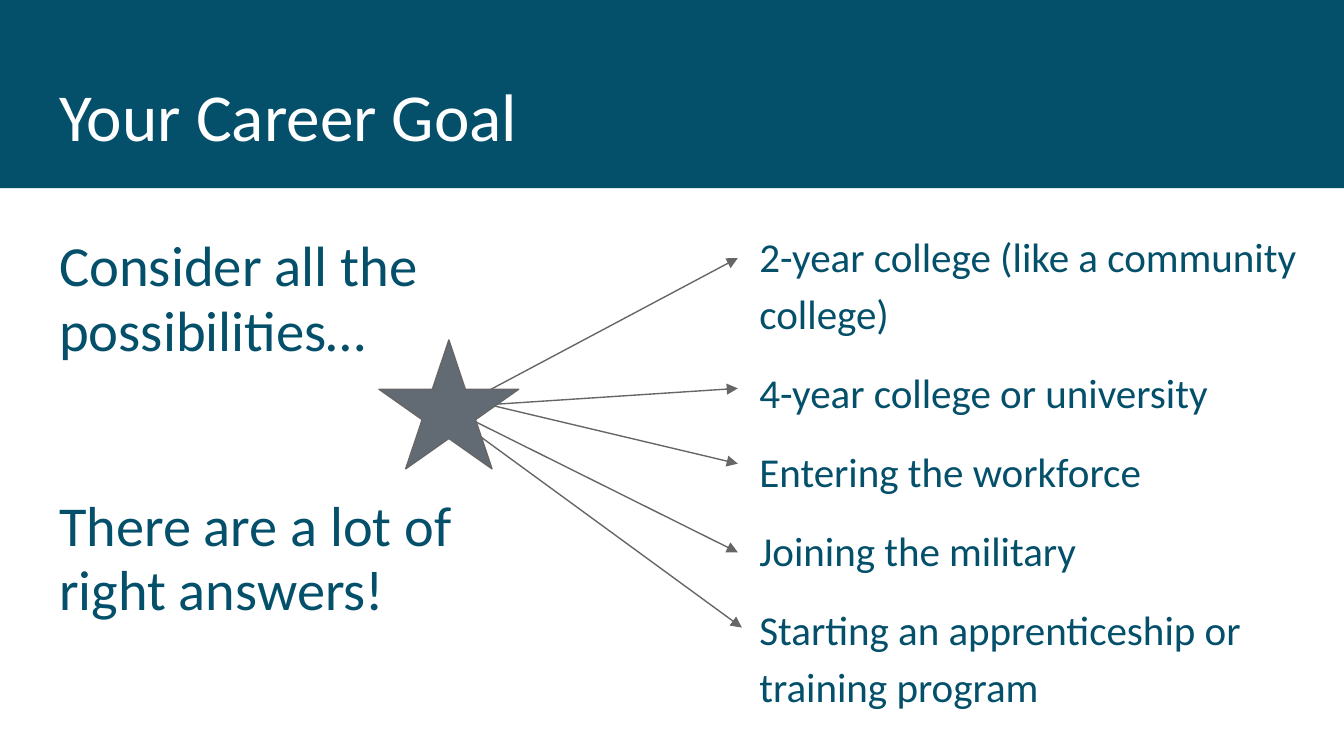
import pptx
import pptx.dml.color
import pptx.enum.shapes
import pptx.enum.text
import pptx.oxml
import pptx.oxml.ns
import pptx.util
from pptx.util import Inches

FONT = "Calibri"
TEAL, WHITE, SLATE, GRAY = "04506B", "FFFFFF", "626B73", "666666"

OPTIONS = [
    "2-year college (like a community college)",
    "4-year college or university",
    "Entering the workforce",
    "Joining the military",
    "Starting an apprenticeship or training program",
]

# Start and end of each arrow, from the top option to the bottom one
ARROWS = [
    ((3.29, 3.09), (5.49, 1.92)),
    ((3.2, 3.04), (5.49, 2.89)),
    ((3.38, 2.95), (5.49, 3.45)),
    ((3.16, 2.95), (5.49, 4.11)),
    ((3.22, 2.99), (5.52, 4.67)),
]


def color(hex_value):
    return pptx.dml.color.RGBColor.from_string(hex_value)


def add_element(parent, tag, **attributes):
    child = parent.makeelement(pptx.oxml.ns.qn(tag), attributes)
    parent.append(child)
    return child


def place(shape, left, top, width, height):
    """Move a placeholder and give it plain, top-anchored text settings."""
    shape.left, shape.top = Inches(left), Inches(top)
    shape.width, shape.height = Inches(width), Inches(height)
    frame = shape.text_frame
    frame.word_wrap = True
    frame.auto_size = pptx.enum.text.MSO_AUTO_SIZE.NONE
    frame.vertical_anchor = pptx.enum.text.MSO_ANCHOR.TOP
    frame.margin_left = frame.margin_right = Inches(0.1)
    frame.margin_top = frame.margin_bottom = Inches(0.1)


def write(paragraph, text, *, size, fill=TEAL, line_spacing=1.15, before=0):
    """Write one unbulleted paragraph."""
    properties = paragraph._p.get_or_add_pPr()
    properties.set("marL", "0")
    properties.set("indent", "0")
    add_element(properties, "a:buNone")
    paragraph.alignment = pptx.enum.text.PP_ALIGN.LEFT
    paragraph.line_spacing = line_spacing
    paragraph.space_before = pptx.util.Pt(before)
    paragraph.space_after = pptx.util.Pt(0)
    run = paragraph.add_run()
    run.text = text
    run.font.name = FONT
    run.font.size = pptx.util.Pt(size)
    run.font.color.rgb = color(fill)


def add_filled_shape(slide, kind, left, top, width, height, fill, outline=None):
    shape = slide.shapes.add_shape(
        kind, Inches(left), Inches(top), Inches(width), Inches(height))
    shape.shadow.inherit = False
    shape.fill.solid()
    shape.fill.fore_color.rgb = color(fill)
    if outline:
        shape.line.color.rgb = color(outline)
        shape.line.width = pptx.util.Pt(0.75)
    else:
        shape.line.fill.background()
    return shape


def add_arrow(slide, start, end):
    arrow = slide.shapes.add_connector(
        pptx.enum.shapes.MSO_CONNECTOR.STRAIGHT,
        *(Inches(value) for value in start + end))
    arrow.line.color.rgb = color(GRAY)
    arrow.line.width = pptx.util.Pt(0.75)
    add_element(arrow.line._get_or_add_ln(), "a:tailEnd", type="triangle")
    add_element(arrow._element.spPr, "a:effectLst")


def main():
    # Widescreen slide, 16:9
    presentation = pptx.Presentation()
    presentation.slide_width = Inches(10)
    presentation.slide_height = Inches(10 * 9 / 16)
    slide = presentation.slides.add_slide(presentation.slide_layouts[3])
    title, message, choices = slide.placeholders
    shapes = pptx.enum.shapes.MSO_SHAPE

    # Title on a colour band, which goes behind the text
    band = add_filled_shape(slide, shapes.RECTANGLE, 0, 0, 10, 1.4, TEAL)
    title._element.addprevious(band._element)
    place(title, 0.34, 0.36, 9.32, 0.68)
    write(title.text_frame.paragraphs[0], "Your Career Goal", size=36, fill=WHITE)

    # Message on the left, split around the star
    place(message, 0.34, 1.65, 3.61, 3.52)
    write(message.text_frame.paragraphs[0], "Consider all the possibilities…",
          size=30.4, line_spacing=0.95)
    write(message.text_frame.add_paragraph(), "There are a lot of right answers!",
          size=30.2, line_spacing=0.95, before=70)

    # Options on the right
    place(choices, 5.55, 1.57, 4.37, 3.52)
    for index, option in enumerate(OPTIONS):
        frame = choices.text_frame
        paragraph = frame.add_paragraph() if index else frame.paragraphs[0]
        write(paragraph, option, size=22, before=12 if index else 0)

    # Arrows fan out from under the star
    for start, end in ARROWS:
        add_arrow(slide, start, end)
    add_filled_shape(slide, shapes.STAR_5_POINT, 2.82, 2.53, 1.04, 0.96, SLATE, GRAY)

    presentation.save("out.pptx")


if __name__ == "__main__":
    main()
